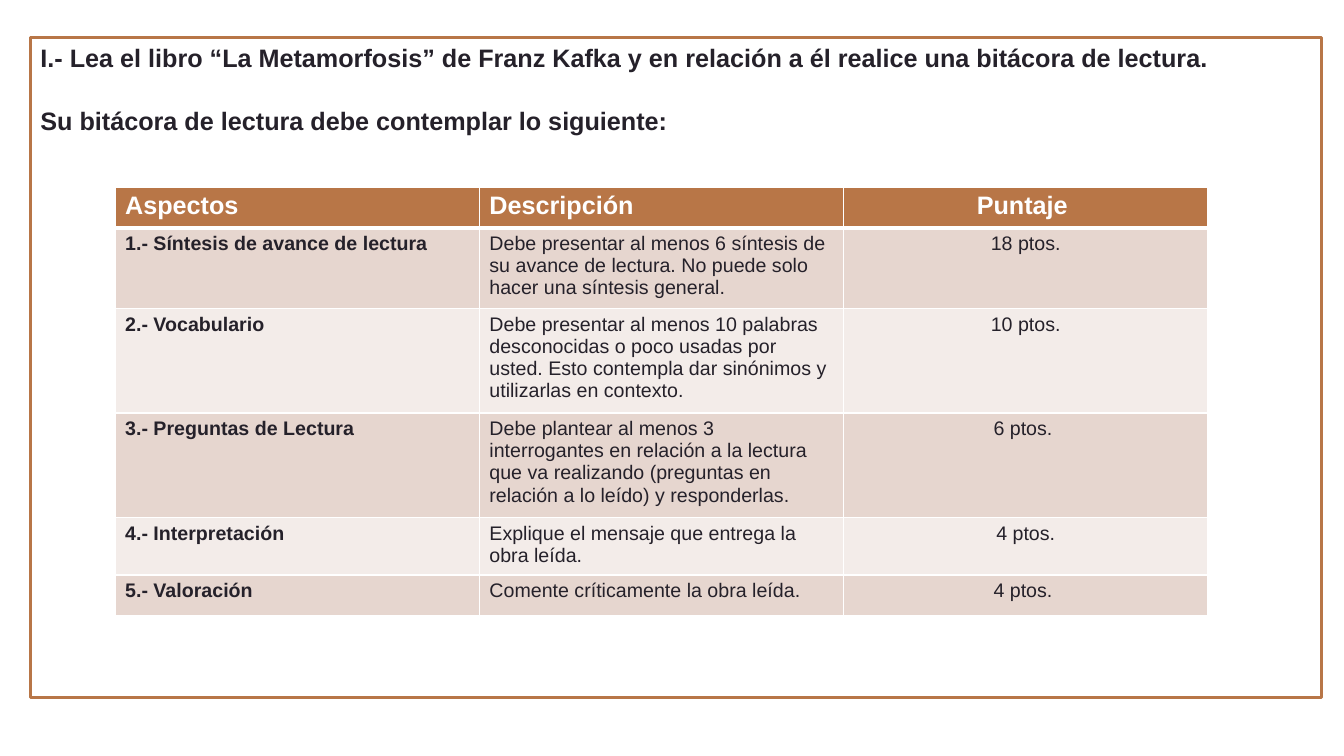
import pptx
import pptx.dml.color
import pptx.enum.shapes
import pptx.enum.text
import pptx.oxml
import pptx.oxml.ns
import pptx.util

Cm = pptx.util.Cm
Pt = pptx.util.Pt
ALIGN = pptx.enum.text.PP_ALIGN

FONT = "Arial"
COLORS = {
    "accent": "B87647",
    "ink": "25212A",
    "white": "FFFFFF",
    "band_dark": "E6D6CF",
    "band_light": "F3ECE9",
}

INSTRUCTIONS = [
    "I.- Lea el libro “La Metamorfosis” de Franz Kafka y en relación a él "
    "realice una bitácora de lectura. ",
    "Su bitácora de lectura debe contemplar lo siguiente:",
]

# Each row: height in cm, then the cell texts
ROWS = [
    (1.03, "Aspectos", "Descripción", "Puntaje "),
    (2.03, "1.- Síntesis de avance de lectura",
     "Debe presentar al menos 6 síntesis de su avance de lectura. "
     "No puede solo hacer una síntesis general.", "18 ptos."),
    (2.64, "2.- Vocabulario",
     "Debe presentar al menos 10 palabras desconocidas o poco usadas por usted. "
     "Esto contempla dar sinónimos y utilizarlas en contexto.", "10 ptos."),
    (2.64, "3.- Preguntas de Lectura",
     "Debe plantear al menos 3 interrogantes en relación a la lectura que va "
     "realizando (preguntas en relación a lo leído) y responderlas.", "6 ptos. "),
    (1.44, "4.- Interpretación",
     "Explique el mensaje que entrega la obra leída.", "4 ptos."),
    (1.03, "5.- Valoración",
     "Comente críticamente la obra leída.", "4 ptos. "),
]


def rgb(name):
    return pptx.dml.color.RGBColor.from_string(COLORS[name])


def style_paragraph(p, size, color, bold, align):
    p.alignment = align
    for r in p.runs:
        r.font.name = FONT
        r.font.size = Pt(size)
        r.font.bold = bold
        r.font.color.rgb = rgb(color)


def set_borders(cell, top, bottom):
    """Draw white cell borders; top and bottom are widths in points."""
    tc_pr = cell._tc.get_or_add_tcPr()
    for side, width in (("L", 1), ("R", 1), ("T", top), ("B", bottom)):
        tc_pr.append(pptx.oxml.parse_xml(
            f'<a:ln{side} {pptx.oxml.ns.nsdecls("a")} w="{Pt(width)}">'
            f'<a:solidFill><a:srgbClr val="{COLORS["white"]}"/></a:solidFill>'
            f'</a:ln{side}>'))


def add_instruction_frame(s):
    sp = s.shapes.add_shape(pptx.enum.shapes.MSO_SHAPE.RECTANGLE,
                            Cm(0.77), Cm(0.95), Cm(32.53), Cm(16.63))
    sp.shadow.inherit = False
    sp.fill.solid()
    sp.fill.fore_color.rgb = rgb("white")
    sp.line.color.rgb = rgb("accent")
    sp.line.width = Pt(2)
    tf = sp.text_frame
    tf.word_wrap = True
    tf.vertical_anchor = pptx.enum.text.MSO_ANCHOR.TOP
    tf.text = "\n".join(INSTRUCTIONS)
    for p in tf.paragraphs:
        style_paragraph(p, 18, "ink", True, ALIGN.JUSTIFY)
    tf.paragraphs[1].space_before = Pt(23)


def fill_cell(cell, text, row, col):
    header = row == 0
    set_borders(cell, top=3 if row == 1 else 1, bottom=3 if header else 1)
    cell.fill.solid()
    band = "band_dark" if row % 2 else "band_light"
    cell.fill.fore_color.rgb = rgb("accent" if header else band)
    cell.text_frame.text = text
    style_paragraph(cell.text_frame.paragraphs[0],
                    size=18 if header else 14,
                    color="white" if header else "ink",
                    bold=header or col == 0,
                    align=ALIGN.CENTER if col == 2 else ALIGN.LEFT)


def add_rubric(s):
    height = sum(row[0] for row in ROWS)
    table = s.shapes.add_table(len(ROWS), 3, Cm(2.9), Cm(4.71),
                               Cm(27.54), Cm(height)).table
    for i, (row_height, *texts) in enumerate(ROWS):
        table.rows[i].height = Cm(row_height)
        for j, text in enumerate(texts):
            fill_cell(table.cell(i, j), text, i, j)


def main():
    prs = pptx.Presentation()
    prs.slide_width, prs.slide_height = Cm(33.87), Cm(19.05)
    s = prs.slides.add_slide(prs.slide_layouts[6])

    # Framed instructions
    add_instruction_frame(s)
    # Scoring table
    add_rubric(s)

    prs.save("out.pptx")


if __name__ == "__main__":
    main()
